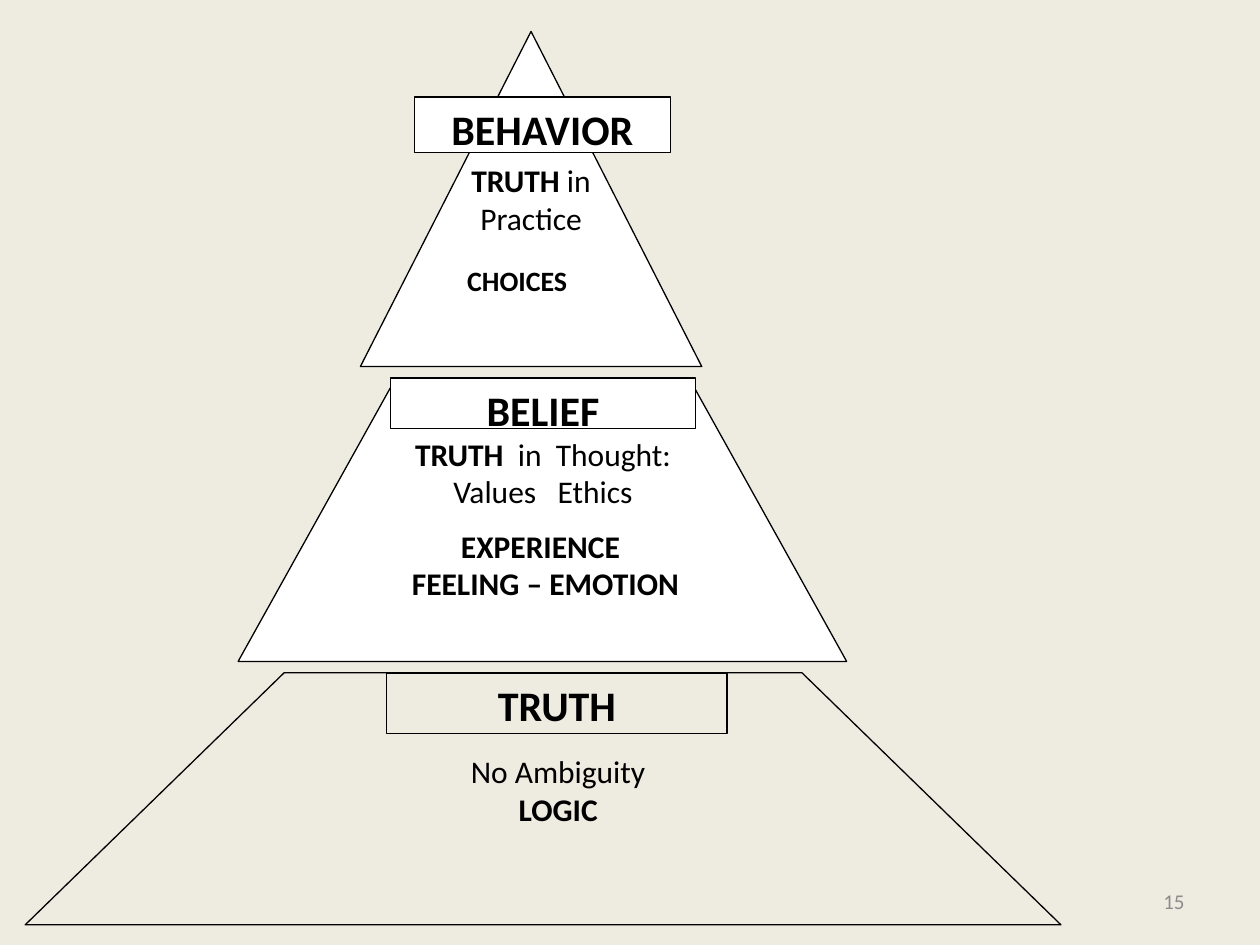
from pptx import Presentation
from pptx.dml.color import RGBColor
from pptx.enum.shapes import MSO_SHAPE
from pptx.enum.text import MSO_ANCHOR, MSO_AUTO_SIZE, PP_ALIGN
from pptx.util import Inches, Pt

COLORS = {"background": "EEECE1", "tier": "FFFFFF", "ink": "000000", "number": "8C8C8C"}
FONT = "Calibri"


def color(name):
    return RGBColor.from_string(COLORS[name])


def style_outline(shape, fill):
    """Give a shape a thin dark line and a fill, or none."""
    shape.shadow.inherit = False
    if fill:
        shape.fill.solid()
        shape.fill.fore_color.rgb = color(fill)
    else:
        shape.fill.background()
    shape.line.color.rgb = color("ink")
    shape.line.width = Pt(0.75)


def write_lines(frame, lines, size, align=PP_ALIGN.CENTER, ink="ink"):
    """Write one paragraph per line; a line is a list of (text, bold) runs."""
    frame.word_wrap = True
    for index, runs in enumerate(lines):
        paragraph = frame.paragraphs[0] if index == 0 else frame.add_paragraph()
        paragraph.alignment = align
        paragraph.font.name = FONT
        paragraph.font.size = Pt(size)
        paragraph.font.color.rgb = color(ink)
        for text, bold in runs:
            run = paragraph.add_run()
            run.text = text
            run.font.bold = bold


def place(box, left, top, width, height):
    """Turn a position within a tier's box into slide lengths."""
    return Inches(box[0] + left), Inches(box[1] + top), Inches(width), Inches(height)


def add_heading(tier, box, area, text, fill):
    heading = tier.add_shape(MSO_SHAPE.RECTANGLE, *place(box, *area))
    style_outline(heading, fill)
    heading.text_frame.vertical_anchor = MSO_ANCHOR.TOP
    write_lines(heading.text_frame, [[(text, True)]], 24)


def add_note(tier, box, area, lines, size=18, align=PP_ALIGN.CENTER, grow=True):
    frame = tier.add_textbox(*place(box, *area)).text_frame
    write_lines(frame, lines, size, align)
    frame.auto_size = MSO_AUTO_SIZE.SHAPE_TO_FIT_TEXT if grow else MSO_AUTO_SIZE.NONE
    return frame


def add_trapezoid(tier, box, fill):
    """Draw a trapezoid whose top edge is half as wide as its base."""
    left, top, width, height = box
    corners = [(left + width * x, top + height * y)
               for x, y in ((0, 1), (0.25, 0), (0.75, 0), (1, 1))]
    points = [(Inches(x), Inches(y)) for x, y in corners]
    builder = tier.build_freeform(*points[0])
    builder.add_line_segments(points[1:], close=True)
    style_outline(builder.convert_to_shape(), fill)


def add_belief(slide, box):
    tier = slide.shapes.add_group_shape().shapes
    add_trapezoid(tier, box, "tier")
    add_heading(tier, box, (1.21, -0.08, 2.42, 0.4), "BELIEF", "tier")
    add_note(tier, box, (1.06, 0.32, 2.72, 0.71),
             [[("TRUTH", True), ("  in  Thought:", False)], [("Values   Ethics", False)]])
    sources = add_note(tier, box, (1.28, 1.05, 2.78, 0.71),
                       [[("EXPERIENCE", True)], [("FEELING – EMOTION", True)]],
                       align=PP_ALIGN.LEFT)
    indent = sources.paragraphs[0]._p.get_or_add_pPr()
    indent.set("marL", str(Inches(0.39)))
    indent.set("indent", "0")


def add_behavior(slide, box):
    tier = slide.shapes.add_group_shape().shapes
    peak = tier.add_shape(MSO_SHAPE.ISOSCELES_TRIANGLE, *place(box, 0, 0, *box[2:]))
    style_outline(peak, "tier")
    add_heading(tier, box, (0.43, 0.52, 2.03, 0.44), "BEHAVIOR", "tier")
    add_note(tier, box, (0.69, 0.98, 1.33, 0.71),
             [[("TRUTH", True), (" in", False)], [("Practice", False)]])
    add_note(tier, box, (0.75, 1.79, 1.4, 0.37), [[("CHOICES", True)]],
             size=16, align=PP_ALIGN.LEFT)


def add_truth(slide, box):
    tier = slide.shapes.add_group_shape().shapes
    add_trapezoid(tier, box, None)
    add_heading(tier, box, (2.87, 0, 2.7, 0.48), "TRUTH", None)
    add_note(tier, box, (2.88, 0.58, 2.7, 0.63),
             [[("No Ambiguity", False)], [("LOGIC", True)]], grow=False)


def add_slide_number(slide, box):
    frame = slide.shapes.add_textbox(*place(box, 0, 0, *box[2:])).text_frame
    frame.vertical_anchor = MSO_ANCHOR.MIDDLE
    write_lines(frame, [[("15", False)]], 12, PP_ALIGN.RIGHT, "number")


def main():
    presentation = Presentation()
    presentation.slide_width = Inches(10)
    presentation.slide_height = Inches(7.5)
    slide = presentation.slides.add_slide(presentation.slide_layouts[6])
    slide.background.fill.solid()
    slide.background.fill.fore_color.rgb = color("background")

    add_slide_number(slide, (7.17, 6.95, 2.33, 0.4))
    add_belief(slide, (1.89, 3.08, 4.83, 2.17))
    add_behavior(slide, (2.86, 0.25, 2.71, 2.66))
    add_truth(slide, (0.2, 5.34, 8.22, 2))
    presentation.save("out.pptx")


if __name__ == "__main__":
    main()
